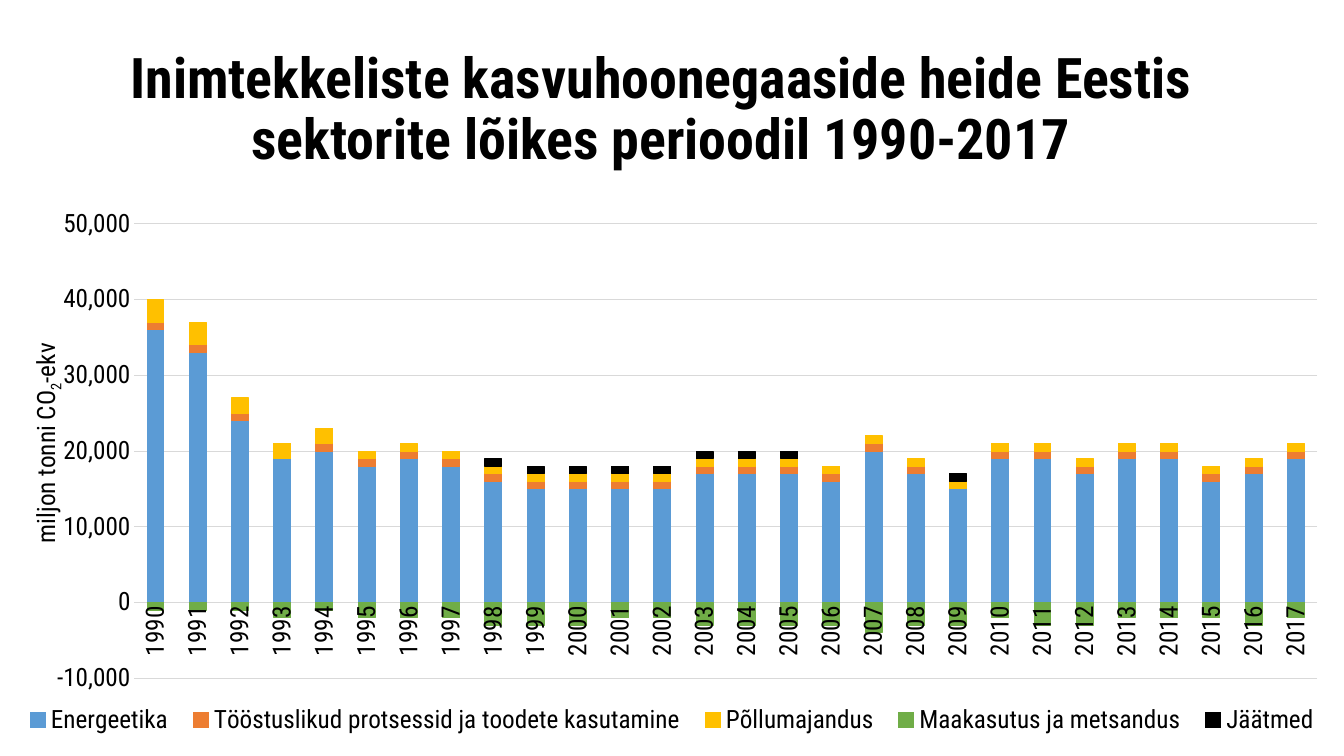
from lxml.etree import SubElement
from pptx import Presentation
from pptx.chart.data import CategoryChartData
from pptx.dml.color import RGBColor
from pptx.enum.chart import XL_CHART_TYPE, XL_LEGEND_POSITION, XL_TICK_MARK
from pptx.enum.text import MSO_ANCHOR, PP_ALIGN
from pptx.oxml.ns import qn
from pptx.util import Pt

FONT = "Roboto Condensed"
COLORS = {
    "text": "000000",
    "grid": "D9D9D9",
    "Energeetika": "5B9BD5",
    "Tööstuslikud protsessid ja toodete kasutamine": "ED7D31",
    "Põllumajandus": "FFC000",
    "Maakasutus ja metsandus": "70AD47",
    "Jäätmed": "000000",
}
YEARS = [str(year) for year in range(1990, 2018)]
THOUSANDS = {
    "Energeetika": [
        36, 33, 24, 19, 20, 18, 19, 18, 16, 15, 15, 15, 15, 17,
        17, 17, 16, 20, 17, 15, 19, 19, 17, 19, 19, 16, 17, 19],
    "Tööstuslikud protsessid ja toodete kasutamine":
        [1] * 3 + [0] + [1] * 15 + [0] + [1] * 8,
    "Põllumajandus": [3] * 2 + [2] * 3 + [1] * 23,
    "Maakasutus ja metsandus": [
        -1, -1, -1, -2, -1, -2, -2, -2, -3, -3, -3, -2, -2, -3,
        -3, -3, -3, -4, -3, -3, -2, -3, -3, -2, -2, -2, -3, -2],
    "Jäätmed": [0] * 8 + [1] * 8 + [0] * 3 + [1] + [0] * 8,
}


def color(name):
    return RGBColor.from_string(COLORS[name])


def style_font(font, size, bold=False):
    font.name = FONT
    font.size = Pt(size)
    font.bold = bold
    font.color.rgb = color("text")


def style_line(line, name):
    line.color.rgb = color(name)
    line.width = Pt(0.75)


def add_text(frame, text, size, bold=False, spacing=None, baseline=None):
    paragraph = frame.paragraphs[0]
    paragraph.alignment = PP_ALIGN.CENTER
    if spacing:
        paragraph.line_spacing = spacing
    run = paragraph.add_run()
    run.text = text
    style_font(run.font, size, bold)
    if baseline:
        run.font._element.set("baseline", str(baseline))


def set_layout(parent, index, **settings):
    for layout in parent.findall(qn("c:layout")):
        parent.remove(layout)
    layout = SubElement(parent, qn("c:layout"))
    parent.insert(index, layout)
    manual = SubElement(layout, qn("c:manualLayout"))
    for tag, value in settings.items():
        SubElement(manual, qn(f"c:{tag}")).set("val", str(value))


def turn_upward(body):
    body.set("rot", "-5400000")
    body.set("vert", "horz")


def add_heading(slide):
    heading = slide.shapes.title
    heading.left, heading.top = Pt(58), Pt(27)
    heading.width, heading.height = Pt(828), Pt(104.4)
    heading.text_frame.word_wrap = True
    heading.text_frame.vertical_anchor = MSO_ANCHOR.MIDDLE
    add_text(heading.text_frame,
             "Inimtekkeliste kasvuhoonegaaside heide Eestis "
             "sektorite lõikes perioodil 1990-2017",
             size=40, bold=True, spacing=0.9)


def format_year_axis(axis):
    axis.major_tick_mark = XL_TICK_MARK.NONE
    style_font(axis.tick_labels.font, 18)
    style_line(axis.format.line, "grid")
    turn_upward(axis._element.find(f"{qn('c:txPr')}/{qn('a:bodyPr')}"))


def format_emission_axis(axis):
    axis.minimum_scale, axis.maximum_scale = -10000, 50000
    axis.major_unit = 10000
    axis.major_tick_mark = XL_TICK_MARK.NONE
    axis.tick_labels.number_format = "#,##0"
    axis.tick_labels.number_format_is_linked = False
    style_font(axis.tick_labels.font, 18)
    axis.format.line.fill.background()
    style_line(axis.major_gridlines.format.line, "grid")
    unit = axis.axis_title
    for text, baseline in (("miljon tonni CO", None), ("2", -25000), ("-ekv", None)):
        add_text(unit.text_frame, text, size=18, baseline=baseline)
    turn_upward(unit.text_frame._txBody.find(qn("a:bodyPr")))
    set_layout(unit._element, 1, xMode="edge", yMode="edge", x=0.02, y=0.25)


def format_legend(legend):
    legend.position = XL_LEGEND_POSITION.BOTTOM
    legend.include_in_layout = False
    style_font(legend.font, 18)
    set_layout(legend._element, 1, xMode="edge", yMode="edge",
               x=0.01, y=0.9, w=0.98, h=0.07)


def add_emission_chart(slide):
    data = CategoryChartData(number_format="#,##0")
    data.categories = YEARS
    for sector, values in THOUSANDS.items():
        data.add_series(sector, [value * 1000 for value in values])
    chart = slide.shapes.add_chart(
        XL_CHART_TYPE.COLUMN_STACKED, Pt(0), Pt(144), Pt(960), Pt(396), data).chart
    chart.has_title = False
    style_font(chart.font, 18)
    columns = chart.plots[0]
    columns.gap_width, columns.overlap = 150, 100
    columns.vary_by_categories = False
    for sector in columns.series:
        sector.invert_if_negative = False
        sector.format.fill.solid()
        sector.format.fill.fore_color.rgb = color(sector.name)
        style_line(sector.format.line, sector.name)
    format_year_axis(chart.category_axis)
    format_emission_axis(chart.value_axis)
    chart.has_legend = True
    format_legend(chart.legend)
    set_layout(columns._element.getparent(), 0, layoutTarget="inner",
               xMode="edge", yMode="edge", x=0.1, y=0.04, w=0.88, h=0.82)


def main():
    deck = Presentation()
    deck.slide_width, deck.slide_height = Pt(960), Pt(540)
    slide = deck.slides.add_slide(deck.slide_layouts[5])
    add_heading(slide)
    add_emission_chart(slide)
    deck.save("out.pptx")


if __name__ == "__main__":
    main()
